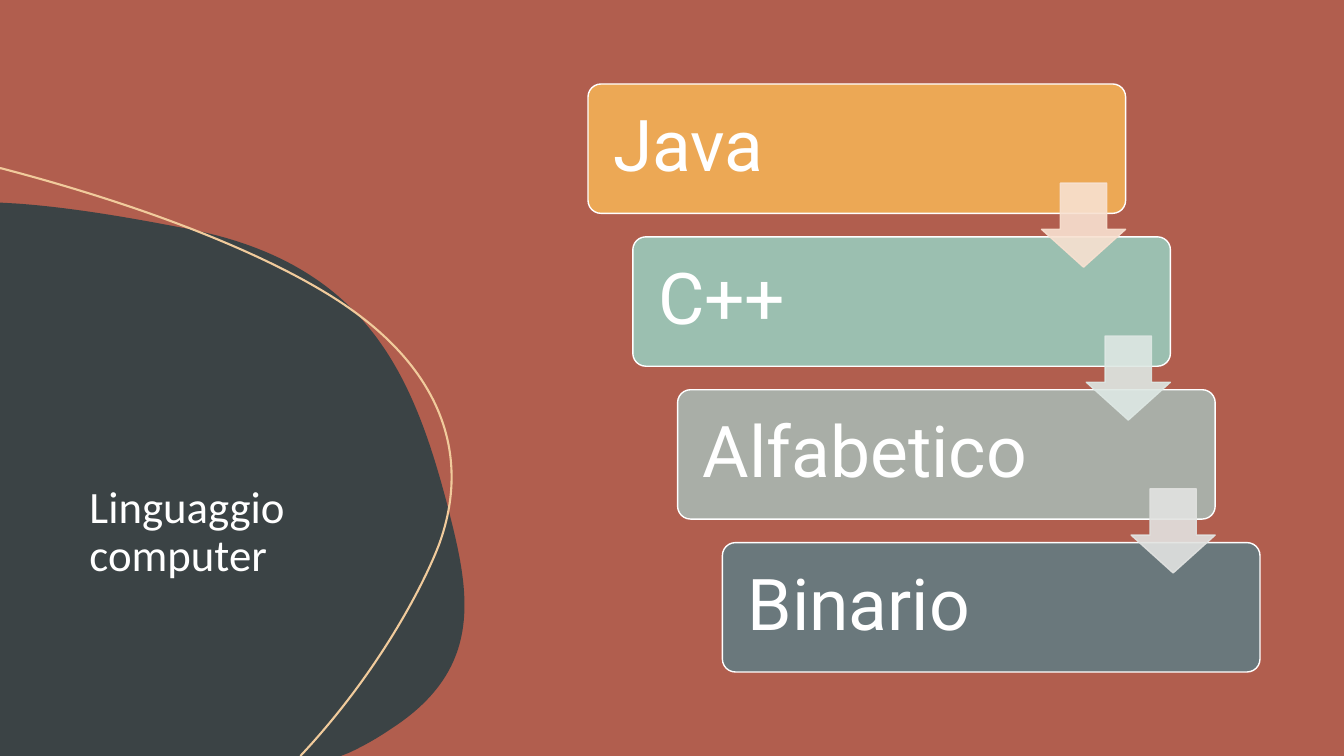
from lxml import etree
from pptx import Presentation
from pptx.dml.color import RGBColor
from pptx.enum.shapes import MSO_SHAPE
from pptx.enum.text import MSO_ANCHOR, MSO_AUTO_SIZE, PP_ALIGN
from pptx.oxml.ns import qn
from pptx.util import Pt

RECTANGLE = MSO_SHAPE.RECTANGLE
ROUNDED, DOWN_ARROW = MSO_SHAPE.ROUNDED_RECTANGLE, MSO_SHAPE.DOWN_ARROW
LEFT, MIDDLE, BOTTOM = PP_ALIGN.LEFT, MSO_ANCHOR.MIDDLE, MSO_ANCHOR.BOTTOM
NO_FIT = MSO_AUTO_SIZE.NONE

COLORS = {
    "brick": "B15E4E", "dark": "3B4345", "sand": "F1CB9C", "white": "FFFFFF",
    "orange": "ECA855", "green": "9BBFB0", "gray": "A9AEA7", "slate": "6A787C",
    "pale_orange": "F8E1D1", "pale_green": "DEE8E4", "pale_gray": "E2E3E1",
}
# Each step: label, box colour, colour of the arrow to the next step
STEPS = [
    ("Java", "orange", "pale_orange"),
    ("C++", "green", "pale_green"),
    ("Alfabetico", "gray", "pale_gray"),
    ("Binario", "slate", None),
]
# Outline segments: one point for a line, three for a Bezier curve
BLOB_START, BLOB_WIDTH = (0, 144.7), 332
BLOB = [
    [(12.2, 145.4)],
    [(51.8, 148.3), (92.9, 155.5), (133.9, 163.4)],
    [(260.6, 187.9), (294.5, 266.4), (319, 358.6)],
    [(334.8, 419.8), (348.5, 475.9), (279.4, 520.6)],
    [(270, 527), (259.9, 532.8), (249.1, 537.8)],
    [(243.4, 540)],
    [(0, 540)],
]
ARC_START, ARC_WIDTH = (0, 120.2), 322.6
ARC = [
    [(0.7, 120.2)],
    [(100.1, 146.2), (185.8, 179.3), (239, 213.1)],
    [(319, 264.2), (335.5, 328.3), (313.9, 388.1)],
    [(303.8, 415.4), (271.4, 479.5), (214.6, 540)],
]


def rgb(name):
    return RGBColor.from_string(COLORS[name])


def paint(shape, fill=None, line=None, width=1):
    shape.shadow.inherit = False
    if fill:
        shape.fill.solid()
        shape.fill.fore_color.rgb = rgb(fill)
    else:
        shape.fill.background()
    if line:
        shape.line.color.rgb = rgb(line)
        shape.line.width = Pt(width)
    else:
        shape.line.fill.background()


def set_opacity(shape, percent):
    for color in shape._element.spPr.iter(qn("a:srgbClr")):
        etree.SubElement(color, qn("a:alpha"), val=str(percent * 1000))


def write(shape, text, font, size, anchor):
    tf = shape.text_frame
    tf.text = text
    tf.word_wrap = True
    tf.auto_size = NO_FIT
    tf.vertical_anchor = anchor
    p = tf.paragraphs[0]
    p.alignment = LEFT
    p.line_spacing = 0.9
    r = p.runs[0]
    r.font.name = font
    r.font.size = Pt(size)
    r.font.color.rgb = rgb("white")
    return tf


def add_outline(s, left, top, start, segments, width, close):
    builder = s.shapes.build_freeform(Pt(left + start[0]), Pt(top + start[1]), scale=1.0)
    ends = [(Pt(left + x), Pt(top + y)) for x, y in (seg[-1] for seg in segments)]
    builder.add_line_segments(ends, close=close)
    shape = builder.convert_to_shape()

    # Bend the straight segments and fit the frame to the bulge
    outline = next(shape._element.iter(qn("a:path")))
    for line, segment in zip(outline.findall(qn("a:lnTo")), segments):
        if len(segment) == 3:
            line.tag = qn("a:cubicBezTo")
            line.remove(line[0])
            for x, y in segment:
                etree.SubElement(line, qn("a:pt"), x=str(Pt(x - start[0])),
                                 y=str(Pt(y - start[1])))
    outline.set("w", str(Pt(width)))
    shape.width = Pt(width)
    return shape


def add_background(s, width, height):
    s.background.fill.solid()
    s.background.fill.fore_color.rgb = rgb("brick")
    panel = s.shapes.add_shape(RECTANGLE, 0, 0, Pt(width), Pt(height))
    paint(panel, "brick")


def add_title_panel(s, left, top):
    # Dark blob and thin curve
    blob = add_outline(s, left, top, BLOB_START, BLOB, BLOB_WIDTH, True)
    paint(blob, fill="dark")
    arc = add_outline(s, left, top, ARC_START, ARC, ARC_WIDTH, False)
    paint(arc, line="sand", width=1.5)

    # Title, brought in front of the blob
    title = s.shapes.title
    title.left, title.top = Pt(left + 56.7), Pt(top + 239)
    title.width, title.height = Pt(240), Pt(180)
    write(title, "Linguaggio computer", "Calibri", 32, BOTTOM)
    s.shapes._spTree.append(title._element)


def add_staircase(s, left, top, width, height):
    box_w, box_h = width * 0.8, height * 0.22
    arrow = box_h * 0.65
    last = len(STEPS) - 1
    step_x, step_y = (width - box_w) / last, (height - box_h) / last

    # Step boxes
    for i, (label, color, _) in enumerate(STEPS):
        box = s.shapes.add_shape(ROUNDED, Pt(left + i * step_x), Pt(top + i * step_y),
                                 Pt(box_w), Pt(box_h))
        box.adjustments[0] = 0.1
        paint(box, color, "white")
        tf = write(box, label, "Roboto", 51, MIDDLE)
        tf.margin_left = tf.margin_right = tf.margin_top = tf.margin_bottom = Pt(15.3)

    # Arrows, flush with the right edge of each box
    for i, (_, _, color) in enumerate(STEPS[:-1]):
        x = left + i * step_x + box_w - arrow
        y = top + i * step_y + 70.8
        shape = s.shapes.add_shape(DOWN_ARROW, Pt(x), Pt(y), Pt(arrow), Pt(arrow))
        shape.adjustments[0] = 0.55
        shape.adjustments[1] = 0.45
        paint(shape, color, color)
        set_opacity(shape, 90)


def main():
    prs = Presentation()
    prs.slide_width, prs.slide_height = Pt(960), Pt(540)
    s = prs.slides.add_slide(prs.slide_layouts[5])
    add_background(s, 960, 540)
    add_title_panel(s, 0, 0)
    add_staircase(s, 420, 60, 480, 420)
    prs.save("out.pptx")


if __name__ == "__main__":
    main()
